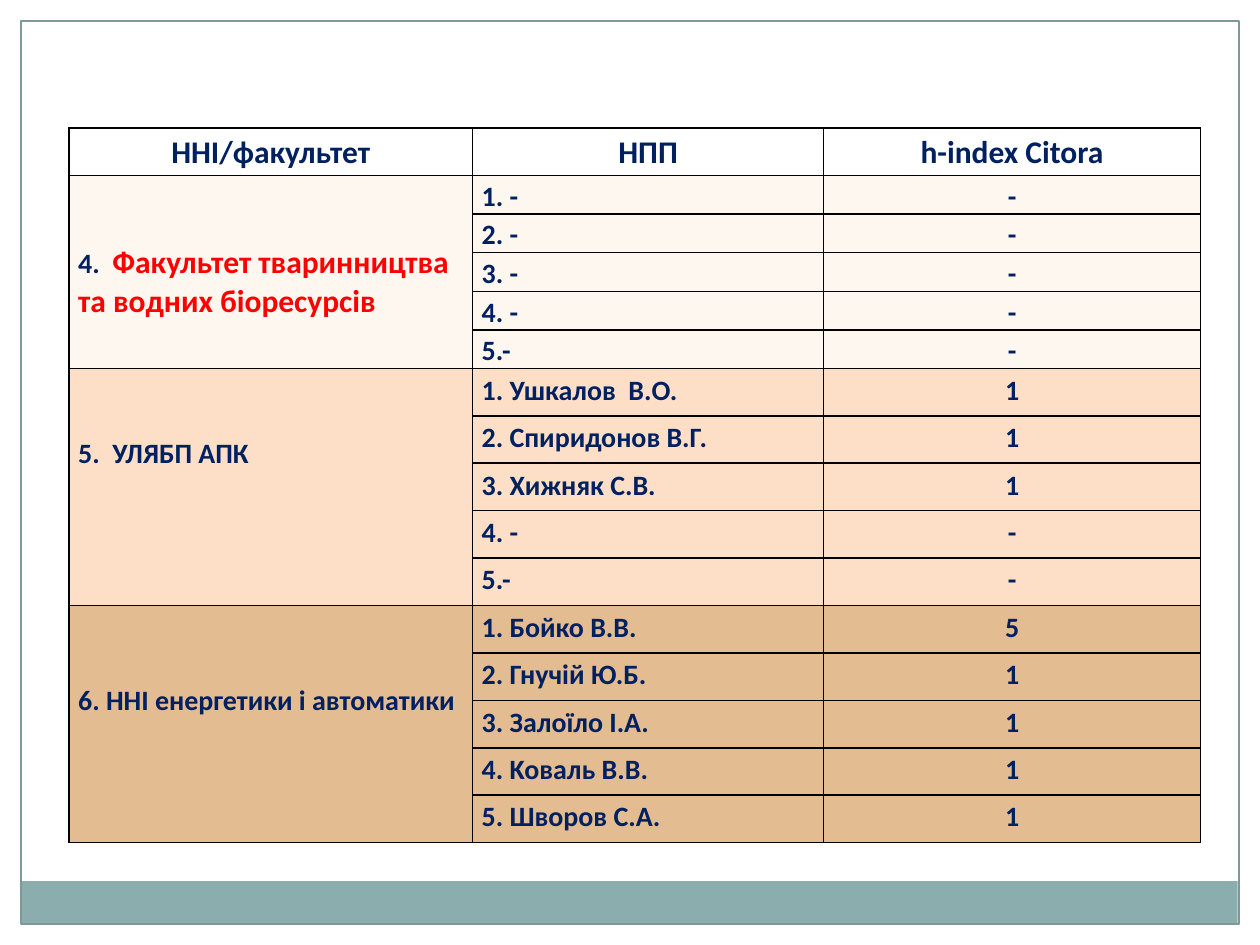
from lxml import etree
from pptx import Presentation
from pptx.dml.color import RGBColor
from pptx.enum.shapes import MSO_SHAPE
from pptx.enum.text import PP_ALIGN
from pptx.oxml.ns import qn
from pptx.util import Pt

RECTANGLE = MSO_SHAPE.RECTANGLE
LEFT, CENTER = PP_ALIGN.LEFT, PP_ALIGN.CENTER
FONT, NAVY, RED, WHITE = "Calibri", "002060", "FF0000", "FFFFFF"
BORDER_SIDES = ("a:lnL", "a:lnR", "a:lnT", "a:lnB")

HEADINGS = ["ННІ/факультет", "НПП", "h-index Citora"]
FACULTIES = [
    {
        "name": [("4.  ", 16, NAVY), ("Факультет тваринництва та водних біоресурсів", 18, RED)],
        "fill": "FEF7F0", "row_height": 22.05, "name_top": 39,
        "name_spacing": 1.0, "staff_spacing": 1.12,
        "staff": [("1. -", "-"), ("2. -", "-"), ("3. -", "-"), ("4. -", "-"), ("5.-", "-")],
    },
    {
        "name": [("5.  УЛЯБП АПК", 16, NAVY)],
        "fill": "FDDFC7", "row_height": 27.1, "name_top": 39,
        "name_spacing": 1.0, "staff_spacing": 1.15,
        "staff": [("1. Ушкалов  В.О.", "1"), ("2. Спиридонов В.Г.", "1"),
                  ("3. Хижняк С.В.", "1"), ("4. -", "-"), ("5.-", "-")],
    },
    {
        "name": [("6. ННІ енергетики і автоматики", 16, NAVY)],
        "fill": "E3BC92", "row_height": 27.1, "name_top": 42,
        "name_spacing": 1.15, "staff_spacing": 1.15,
        "staff": [("1. Бойко В.В.", "5"), ("2. Гнучій Ю.Б.", "1"), ("3. Залоїло І.А.", "1"),
                  ("4. Koваль В.В.", "1"), ("5. Шворов С.А.", "1")],
    },
]
COLUMN_WIDTHS = [230.6, 200.6, 215.4]
HEADER_HEIGHT = 27.2
TABLE_LEFT, TABLE_TOP = 39.5, 73.2
PAGE_WIDTH, PAGE_HEIGHT, EDGE = 720, 540, 12
BANDS = [
    (0, 0, PAGE_WIDTH, EDGE, WHITE),
    (PAGE_WIDTH - EDGE, 0, EDGE, PAGE_HEIGHT, WHITE),
    (0, 0, EDGE, PAGE_HEIGHT, WHITE),
    (11.75, 503.5, 695.5, 24.4, "8CADAE"),
]


def color(value):
    return RGBColor.from_string(value)


def add_rectangle(page, left, top, width, height, fill=None, line=None):
    box = page.shapes.add_shape(RECTANGLE, Pt(left), Pt(top), Pt(width), Pt(height))
    box.shadow.inherit = False
    if fill:
        box.fill.solid()
        box.fill.fore_color.rgb = color(fill)
    else:
        box.fill.background()
    if line:
        box.line.color.rgb = color(line)
        box.line.width = Pt(0.75)
    else:
        box.line.fill.background()


def style_cell(cell, fill=None):
    properties = cell._tc.get_or_add_tcPr()
    for side in BORDER_SIDES:
        border = etree.SubElement(properties, qn(side), w=str(Pt(1)))
        solid = etree.SubElement(border, qn("a:solidFill"))
        etree.SubElement(solid, qn("a:srgbClr"), val="000000")
    if fill:
        cell.fill.solid()
        cell.fill.fore_color.rgb = color(fill)
    else:
        cell.fill.background()


def write_cell(cell, spans, align=LEFT, spacing=1.15, top=0):
    cell.margin_left = cell.margin_right = Pt(5.2)
    cell.margin_top, cell.margin_bottom = Pt(top), Pt(0)
    para = cell.text_frame.paragraphs[0]
    para.alignment = align
    para.line_spacing = spacing
    for text, size, text_color in spans:
        span = para.add_run()
        span.text = text
        span.font.name = FONT
        span.font.size = Pt(size)
        span.font.bold = True
        span.font.color.rgb = color(text_color)


def add_index_table(page):
    heights = [HEADER_HEIGHT]
    for faculty in FACULTIES:
        heights += [faculty["row_height"]] * len(faculty["staff"])
    table = page.shapes.add_table(
        len(heights), len(COLUMN_WIDTHS), Pt(TABLE_LEFT), Pt(TABLE_TOP),
        Pt(sum(COLUMN_WIDTHS)), Pt(sum(heights))).table
    table.first_row = table.horz_banding = False
    for column, width in zip(table.columns, COLUMN_WIDTHS):
        column.width = Pt(width)
    for row, height in zip(table.rows, heights):
        row.height = Pt(height)

    for index, heading in enumerate(HEADINGS):
        style_cell(table.cell(0, index))
        write_cell(table.cell(0, index), [(heading, 18, NAVY)], CENTER)

    first = 1
    for faculty in FACULTIES:
        last = first + len(faculty["staff"]) - 1
        spacing = faculty["staff_spacing"]
        for row, (person, score) in enumerate(faculty["staff"], first):
            for index in range(len(COLUMN_WIDTHS)):
                style_cell(table.cell(row, index), faculty["fill"])
            write_cell(table.cell(row, 1), [(person, 16, NAVY)], LEFT, spacing)
            write_cell(table.cell(row, 2), [(score, 16, NAVY)], CENTER, spacing)
        name_cell = table.cell(first, 0)
        name_cell.merge(table.cell(last, 0))
        write_cell(name_cell, faculty["name"], LEFT, faculty["name_spacing"],
                   faculty["name_top"])
        first = last + 1


def main():
    deck = Presentation()
    deck.slide_width, deck.slide_height = Pt(PAGE_WIDTH), Pt(PAGE_HEIGHT)
    page = deck.slides.add_slide(deck.slide_layouts[6])
    for band in BANDS:
        add_rectangle(page, *band)
    add_rectangle(page, EDGE, EDGE, PAGE_WIDTH - 2 * EDGE, PAGE_HEIGHT - 2 * EDGE, line="7C999A")
    add_index_table(page)
    deck.save("out.pptx")


if __name__ == "__main__":
    main()
